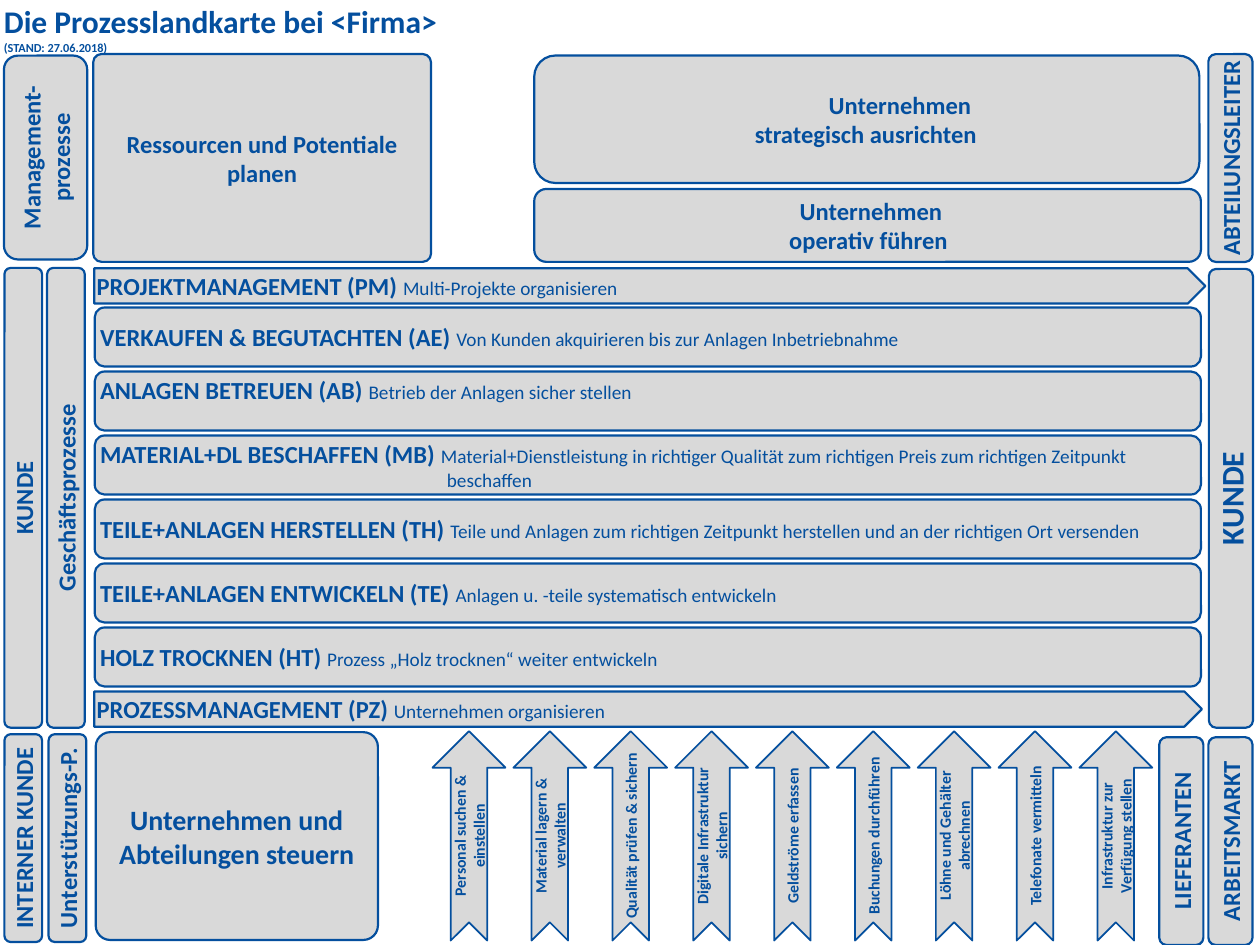
from pptx import Presentation
from pptx.dml.color import RGBColor
from pptx.enum.shapes import MSO_SHAPE
from pptx.enum.text import MSO_ANCHOR, PP_ALIGN
from pptx.util import Cm, Pt

BLUE = "044F9E"
GREY = "D9D9D9"
INSET = 0.05


def write(box, text, size=14, alignment=PP_ALIGN.CENTER, detail="", hanging=0):
    """Add one paragraph per line of text; detail follows in small regular type."""
    frame = box.text_frame
    for line in text.split("\n"):
        para = frame.paragraphs[-1]
        if para.runs:
            para = frame.add_paragraph()
        para.alignment = alignment
        if hanging:
            properties = para._p.get_or_add_pPr()
            properties.set("marL", str(Cm(hanging)))
            properties.set("indent", str(-Cm(hanging)))
        for words, points, bold in ((line, size, True), (detail, 11, False)):
            if words:
                span = para.add_run()
                span.text = words
                span.font.name = "Calibri"
                span.font.size = Pt(points)
                span.font.bold = bold
                span.font.color.rgb = RGBColor.from_string(BLUE)


def add_box(kind, left, top, width, height, upright=False, line_width=1.25,
            margin_right=INSET, margin_bottom=INSET):
    """Add a grey shape; left, top, width and height are as seen, in cm.

    An upright shape is turned so that its text reads from bottom to top.
    """
    if upright:
        left += (width - height) / 2
        top += (height - width) / 2
        width, height = height, width
    box = page.shapes.add_shape(kind, Cm(left), Cm(top), Cm(width), Cm(height))
    box.rotation = 270 if upright else 0
    box.shadow.inherit = False
    box.fill.solid()
    box.fill.fore_color.rgb = RGBColor.from_string(GREY)
    box.line.color.rgb = RGBColor.from_string(BLUE)
    box.line.width = Pt(line_width)
    frame = box.text_frame
    frame.word_wrap = True
    frame.vertical_anchor = MSO_ANCHOR.MIDDLE
    frame.margin_left = frame.margin_top = Cm(INSET)
    frame.margin_right = Cm(margin_right)
    frame.margin_bottom = Cm(margin_bottom)
    return box


deck = Presentation()
deck.slide_width = Cm(25.4)
deck.slide_height = Cm(19.05)
page = deck.slides.add_slide(deck.slide_layouts[6])

# Title
title = page.shapes.add_textbox(Cm(0.03), 0, Cm(9.7), Cm(1.17))
frame = title.text_frame
frame.word_wrap = True
frame.margin_left = frame.margin_right = Cm(INSET)
frame.margin_top = frame.margin_bottom = Cm(INSET)
write(title, "Die Prozesslandkarte bei <Firma>", 18, PP_ALIGN.JUSTIFY)
write(title, "(STAND: 27.06.2018)", 7, PP_ALIGN.JUSTIFY)

# Upright labels at both sides: text, size, left, top, width, height
for text, size, *place in (
    ("Management-\nprozesse", 14, 0.08, 1.12, 1.68, 4.11),
    ("KUNDE", 14, 0.09, 5.4, 0.76, 9.27),
    ("Geschäftsprozesse", 14, 0.95, 5.4, 0.76, 9.27),
    ("INTERNER KUNDE", 14, 0.09, 14.8, 0.76, 4.19),
    ("Unterstützungs-P.", 14, 0.98, 14.8, 0.76, 4.19),
    ("ABTEILUNGSLEITER", 14, 24.36, 1.09, 0.89, 4.19),
    ("KUNDE", 18, 24.37, 5.42, 0.89, 9.25),
    ("LIEFERANTEN", 14, 23.37, 14.86, 0.89, 4.19),
    ("ARBEITSMARKT", 14, 24.36, 14.86, 0.89, 4.19),
):
    write(add_box(MSO_SHAPE.ROUNDED_RECTANGLE, *place, upright=True), text, size)

# Management processes
resources = add_box(MSO_SHAPE.ROUNDED_RECTANGLE, 1.88, 1.09, 6.81, 4.19)
resources.adjustments[0] = 0.04
write(resources, "Ressourcen und Potentiale planen")
strategy = add_box(MSO_SHAPE.ROUNDED_RECTANGLE, 10.77, 1.12, 13.41, 2.57, margin_right=4.36)
write(strategy, "Unternehmen \nstrategisch ausrichten", alignment=PP_ALIGN.RIGHT)
operations = add_box(MSO_SHAPE.ROUNDED_RECTANGLE, 10.77, 3.81, 13.44, 1.47, margin_right=5.03)
write(operations, "Unternehmen \noperativ führen", alignment=PP_ALIGN.RIGHT)

# Business processes, framed by two pentagon bars
for top, width, name, detail in (
    (5.41, 22.4, "PROJEKTMANAGEMENT (PM) ", "Multi-Projekte organisieren"),
    (13.94, 22.33, "PROZESSMANAGEMENT (PZ) ", "Unternehmen organisieren"),
):
    bar = add_box(MSO_SHAPE.PENTAGON, 1.9, top, width, 0.71)
    write(bar, name, alignment=PP_ALIGN.LEFT, detail=detail)

# Name, detail, hanging indent, bottom margin
for row, (name, detail, hanging, margin_bottom) in enumerate((
    ("VERKAUFEN & BEGUTACHTEN (AE) ",
     "Von Kunden akquirieren bis zur Anlagen Inbetriebnahme", 0, INSET),
    ("ANLAGEN BETREUEN (AB) ", "Betrieb der Anlagen sicher stellen", 0, 0.52),
    ("MATERIAL+DL BESCHAFFEN (MB) ",
     "Material+Dienstleistung in richtiger Qualität zum richtigen Preis "
     "zum richtigen Zeitpunkt beschaffen", 6.99, INSET),
    ("TEILE+ANLAGEN HERSTELLEN (TH) ",
     "Teile und Anlagen zum richtigen Zeitpunkt herstellen "
     "und an der richtigen Ort versenden", 0, INSET),
    ("TEILE+ANLAGEN ENTWICKELN (TE) ", "Anlagen u. -teile systematisch entwickeln", 0, INSET),
    ("HOLZ TROCKNEN (HT) ", "Prozess „Holz trocknen“ weiter entwickeln", 0, INSET),
)):
    process = add_box(MSO_SHAPE.ROUNDED_RECTANGLE, 1.91, 6.2 + 1.29 * row, 22.3, 1.19,
                      margin_bottom=margin_bottom)
    write(process, name, alignment=PP_ALIGN.LEFT, detail=detail, hanging=hanging)

# Support processes
control = add_box(MSO_SHAPE.ROUNDED_RECTANGLE, 1.93, 14.76, 5.69, 4.19)
control.adjustments[0] = 0.07
write(control, "Unternehmen und Abteilungen steuern", 16)

for column, text in enumerate((
    "Personal suchen & einstellen",
    "Material lagern & verwalten",
    "Qualität prüfen & sichern",
    "Digitale Infrastruktur sichern",
    "Geldströme erfassen",
    "Buchungen durchführen",
    "Löhne und Gehälter abrechnen",
    "Telefonate vermitteln",
    "Infrastruktur zur Verfügung stellen",
)):
    arrow = add_box(MSO_SHAPE.NOTCHED_RIGHT_ARROW, 8.72 + 1.63 * column, 14.74, 1.47, 4.22,
                    upright=True, line_width=1)
    write(arrow, text, 9)

deck.save("out.pptx")
